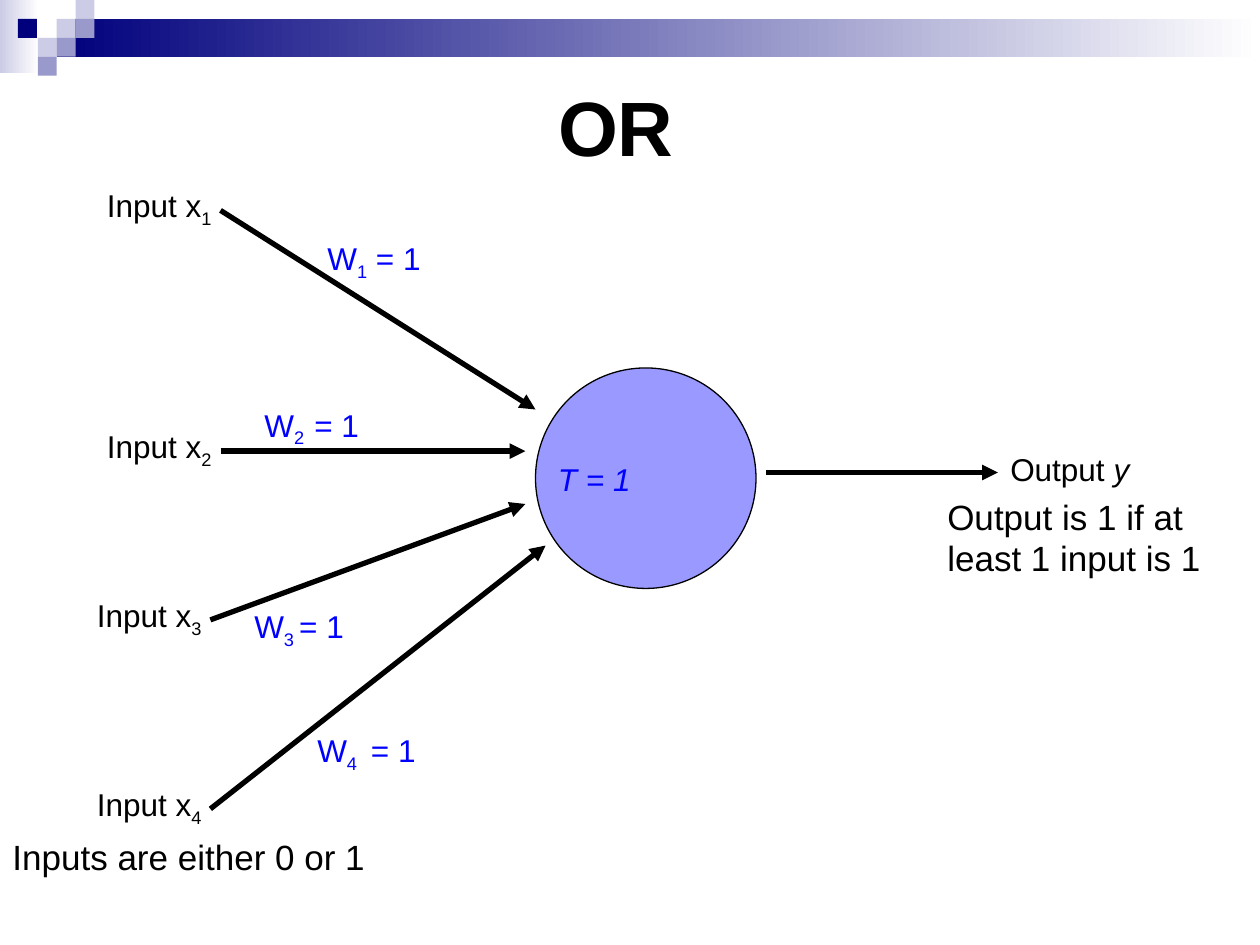
import pptx
import pptx.dml.color
import pptx.enum.shapes
import pptx.enum.text
import pptx.oxml.ns
import pptx.util
from lxml import etree
from pptx.util import Inches

RGBColor = pptx.dml.color.RGBColor
MSO_SHAPE = pptx.enum.shapes.MSO_SHAPE
BLACK = RGBColor(0x00, 0x00, 0x00)
WHITE = RGBColor(0xFF, 0xFF, 0xFF)
BLUE = RGBColor(0x00, 0x00, 0xFF)
NAVY = RGBColor(0x00, 0x00, 0x7D)
PALE = RGBColor(0xCC, 0xCC, 0xE6)
MEDIUM = RGBColor(0x99, 0x99, 0xCC)
NEURON_FILL = RGBColor(0x99, 0x99, 0xFF)


def write_text(lines, left, top, width, height, size=18, color=BLACK, bold=False,
               line_spacing=None, holder=None):
    if holder is None:
        holder = slide.shapes.add_textbox(0, 0, 0, 0)
    holder.left, holder.top = Inches(left), Inches(top)
    holder.width, holder.height = Inches(width), Inches(height)
    frame = holder.text_frame
    frame.word_wrap = True
    frame.auto_size = pptx.enum.text.MSO_AUTO_SIZE.NONE
    frame.vertical_anchor = pptx.enum.text.MSO_ANCHOR.TOP
    for index, runs in enumerate(lines):
        paragraph = frame.add_paragraph() if index else frame.paragraphs[0]
        paragraph.alignment = pptx.enum.text.PP_ALIGN.LEFT
        paragraph.space_before = pptx.util.Pt(size * 0.55)
        if line_spacing:
            paragraph.line_spacing = line_spacing
        for text, style in runs:
            run = paragraph.add_run()
            run.text = text
            run.font.name = "Arial"
            run.font.size = pptx.util.Pt(size)
            run.font.color.rgb = color
            run.font.bold = bold
            run.font.italic = style == "italic"
            if style == "subscript":
                run.font._element.set("baseline", "-25000")


def add_arrow(start, end):
    arrow = slide.shapes.add_connector(
        pptx.enum.shapes.MSO_CONNECTOR.STRAIGHT, *map(Inches, start + end))
    arrow.line.color.rgb = BLACK
    arrow.line.width = pptx.util.Pt(3)
    head = etree.SubElement(arrow.line._get_or_add_ln(), pptx.oxml.ns.qn("a:tailEnd"))
    head.set("type", "triangle")
    etree.SubElement(arrow._element.spPr, pptx.oxml.ns.qn("a:effectLst"))


presentation = pptx.Presentation()
presentation.slide_width = Inches(10)
presentation.slide_height = Inches(7.5)
slide = presentation.slides.add_slide(presentation.slide_layouts[5])

for left, top, width, height, color in [
    (0, 0, 0.31, 0.58, PALE),
    (0.45, 0.15, 9.55, 0.3, NAVY),
]:
    band = slide.shapes.add_shape(
        MSO_SHAPE.RECTANGLE, Inches(left), Inches(top), Inches(width), Inches(height))
    band.shadow.inherit = False
    band.line.fill.background()
    band.fill.gradient()
    band.fill.gradient_angle = 0
    for stop, stop_color, position in zip(band.fill.gradient_stops, (color, WHITE), (0, 1)):
        stop.color.rgb = stop_color
        stop.position = position

TILE = 0.15
for column, row, color in [
    (3, 1, PALE), (4, 0, PALE), (4, 1, MEDIUM), (2, 2, PALE),
    (0.95, 1, NAVY), (3, 2, MEDIUM), (2, 3, MEDIUM),
]:
    tile = slide.shapes.add_shape(
        MSO_SHAPE.RECTANGLE, Inches(column * TILE), Inches(row * TILE),
        Inches(TILE), Inches(TILE))
    tile.shadow.inherit = False
    tile.line.fill.background()
    tile.fill.solid()
    tile.fill.fore_color.rgb = color

neuron = slide.shapes.add_shape(
    MSO_SHAPE.OVAL, Inches(4.25), Inches(2.92), Inches(1.75), Inches(1.75))
neuron.shadow.inherit = False
neuron.fill.solid()
neuron.fill.fore_color.rgb = NEURON_FILL
neuron.line.color.rgb = BLACK
neuron.line.width = pptx.util.Pt(0.75)
write_text([[("T = 1", "italic")]], 4.33, 3.6, 1.75, 0.4, color=BLUE)

add_arrow((6.08, 3.75), (7.92, 3.75))
write_text([[("Output ", None), ("y", "italic")]], 7.92, 3.52, 1.5, 0.4)

for number, start, end, weight_at, gap, value in [
    ("1", (1.75, 1.67), (4.25, 3.25), (2.5, 1.85), "", " = 1"),
    ("2", (1.75, 3.58), (4.17, 3.58), (2, 3.17), "  ", "= 1"),
    ("3", (1.67, 4.92), (4.17, 4), (1.92, 4.77), " ", "= 1"),
    ("4", (1.67, 6.42), (4.33, 4.33), (2.42, 5.75), " ", " = 1"),
]:
    add_arrow(start, end)
    write_text([[("Input x", None), (number, "subscript")]],
               start[0] - 1, start[1] - 0.24, 1.25, 0.4)
    write_text([[("W", None), (number + gap, "subscript"), (value, None)]],
               *weight_at, 1.5, 0.4, color=BLUE)

write_text([[("OR", None)]], 4.33, 0.58, 3.75, 0.83, size=44, bold=True,
           holder=slide.shapes.title)
write_text([[("Inputs are either 0 or 1", None)]], 0, 6.58, 3.58, 0.43, size=20)
write_text([[("Output is 1 if at", None)], [("least 1 input is 1", None)]],
           7.42, 4.03, 4, 0.6, size=20, line_spacing=0.5)

presentation.save("out.pptx")
